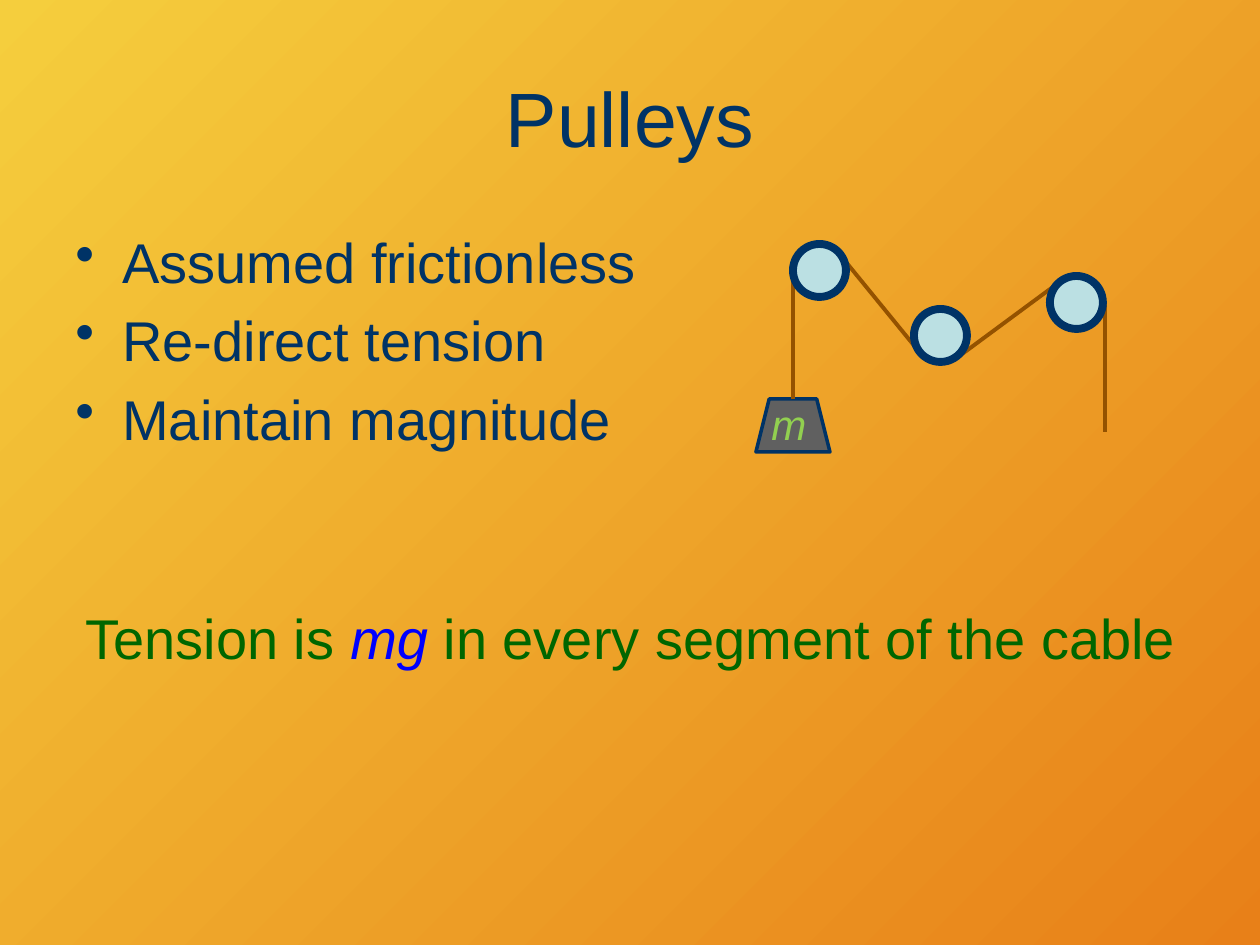
import dataclasses

import pptx
import pptx.dml.color
import pptx.enum.shapes
import pptx.enum.text
import pptx.oxml.ns
import pptx.util
from lxml import etree

PX = 914400 // 126


@dataclasses.dataclass(frozen=True)
class Theme:
    font: str = "Arial"
    navy: str = "003366"
    green: str = "006600"
    blue: str = "0000FF"
    lime: str = "92D050"
    weight: str = "606060"
    pulley: str = "BBE0E3"
    rope: str = "945200"
    background: tuple = ("F5CE3D", "E88018")
    title_size: int = 44
    body_size: int = 32
    label_size: int = 24


THEME = Theme()
SHAPES = pptx.enum.shapes.MSO_SHAPE
ANCHOR = pptx.enum.text.MSO_ANCHOR
ALIGN = pptx.enum.text.PP_ALIGN

TITLE = "Pulleys"
BULLETS = ["Assumed frictionless", "Re-direct tension", "Maintain magnitude"]
CONCLUSION = [
    ("Tension is ", THEME.green, False),
    ("mg", THEME.blue, True),
    (" in every segment of the cable", THEME.green, False),
]
MASS_LABEL = [("m", THEME.lime, True)]

WEIGHT = (756, 399, 74, 53)
PULLEY_SIZE = 53
PULLEYS = [(793, 244), (914, 309), (1050, 276)]
WEIGHT_ROPE = (793, 399, 793, 271)
ROPES = [(921, 354, 837, 251), (1057, 284, 954, 360), (1105, 432, 1105, 304)]


def px(*values):
    return [pptx.util.Emu(value * PX) for value in values]


def rgb(code):
    return pptx.dml.color.RGBColor.from_string(code)


def add_text(page, place, lines, size, wrap=True, anchor=ANCHOR.TOP):
    """Each line is a list of (text, colour, italic) spans."""
    box = page.shapes.add_textbox(*px(*place))
    frame = box.text_frame
    frame.word_wrap = wrap
    frame.vertical_anchor = anchor
    if not wrap:
        frame.auto_size = pptx.enum.text.MSO_AUTO_SIZE.SHAPE_TO_FIT_TEXT
    for index, spans in enumerate(lines):
        para = frame.add_paragraph() if index else frame.paragraphs[0]
        para.font.name = THEME.font
        para.font.size = pptx.util.Pt(size)
        for text, colour, italic in spans:
            span = para.add_run()
            span.text = text
            span.font.name = THEME.font
            span.font.size = pptx.util.Pt(size)
            span.font.color.rgb = rgb(colour)
            span.font.italic = italic
    return frame.paragraphs


def add_bullet(para):
    """Hanging bullet with a fifth of a line above it."""
    qn = pptx.oxml.ns.qn
    indent = px(47)[0]
    properties = para._p.get_or_add_pPr()
    properties.set("marL", str(indent))
    properties.set("indent", str(-indent))
    spacing = etree.SubElement(properties, qn("a:spcBef"))
    etree.SubElement(spacing, qn("a:spcPct"), val="20000")
    bullet = etree.Element(qn("a:buChar"), char="•")
    spacing.addnext(bullet)


def add_solid(page, kind, place, fill, line_width):
    shape = page.shapes.add_shape(kind, *px(*place))
    shape.shadow.inherit = False
    shape.fill.solid()
    shape.fill.fore_color.rgb = rgb(fill)
    shape.line.color.rgb = rgb(THEME.navy)
    shape.line.width = pptx.util.Pt(line_width)
    return shape


def add_rope(page, ends):
    rope = page.shapes.add_connector(
        pptx.enum.shapes.MSO_CONNECTOR.STRAIGHT, *px(*ends))
    rope.line.color.rgb = rgb(THEME.rope)
    rope.line.width = pptx.util.Pt(2.25)
    etree.SubElement(rope._element.spPr, pptx.oxml.ns.qn("a:effectLst"))
    return rope


def paint_background(page):
    fill = page.background.fill
    fill.gradient()
    fill.gradient_angle = 315
    for stop, colour, position in zip(fill.gradient_stops, THEME.background, (0, 1)):
        stop.color.rgb = rgb(colour)
        stop.position = position


def main():
    deck = pptx.Presentation()
    deck.slide_width, deck.slide_height = px(1260, 945)
    page = deck.slides.add_slide(deck.slide_layouts[6])
    paint_background(page)

    title = add_text(page, (63, 38, 1134, 158), [[(TITLE, THEME.navy, False)]],
                     THEME.title_size, anchor=ANCHOR.MIDDLE)
    title[0].alignment = ALIGN.CENTER
    lines = [[(text, THEME.navy, False)] for text in BULLETS]
    for para in add_text(page, (63, 221, 609, 347), lines, THEME.body_size):
        add_bullet(para)

    weight = add_solid(page, SHAPES.TRAPEZOID, WEIGHT, THEME.weight, 2)
    add_rope(page, WEIGHT_ROPE).begin_connect(weight, 0)
    for ends in ROPES:
        add_rope(page, ends)
    for left, top in PULLEYS:
        add_solid(page, SHAPES.OVAL, (left, top, PULLEY_SIZE, PULLEY_SIZE),
                  THEME.pulley, 4.5)

    add_text(page, (759, 392, 60, 63), [MASS_LABEL], THEME.label_size, wrap=False)
    add_text(page, (73, 597, 1124, 81), [CONCLUSION], THEME.body_size, wrap=False)
    deck.save("out.pptx")


if __name__ == "__main__":
    main()
